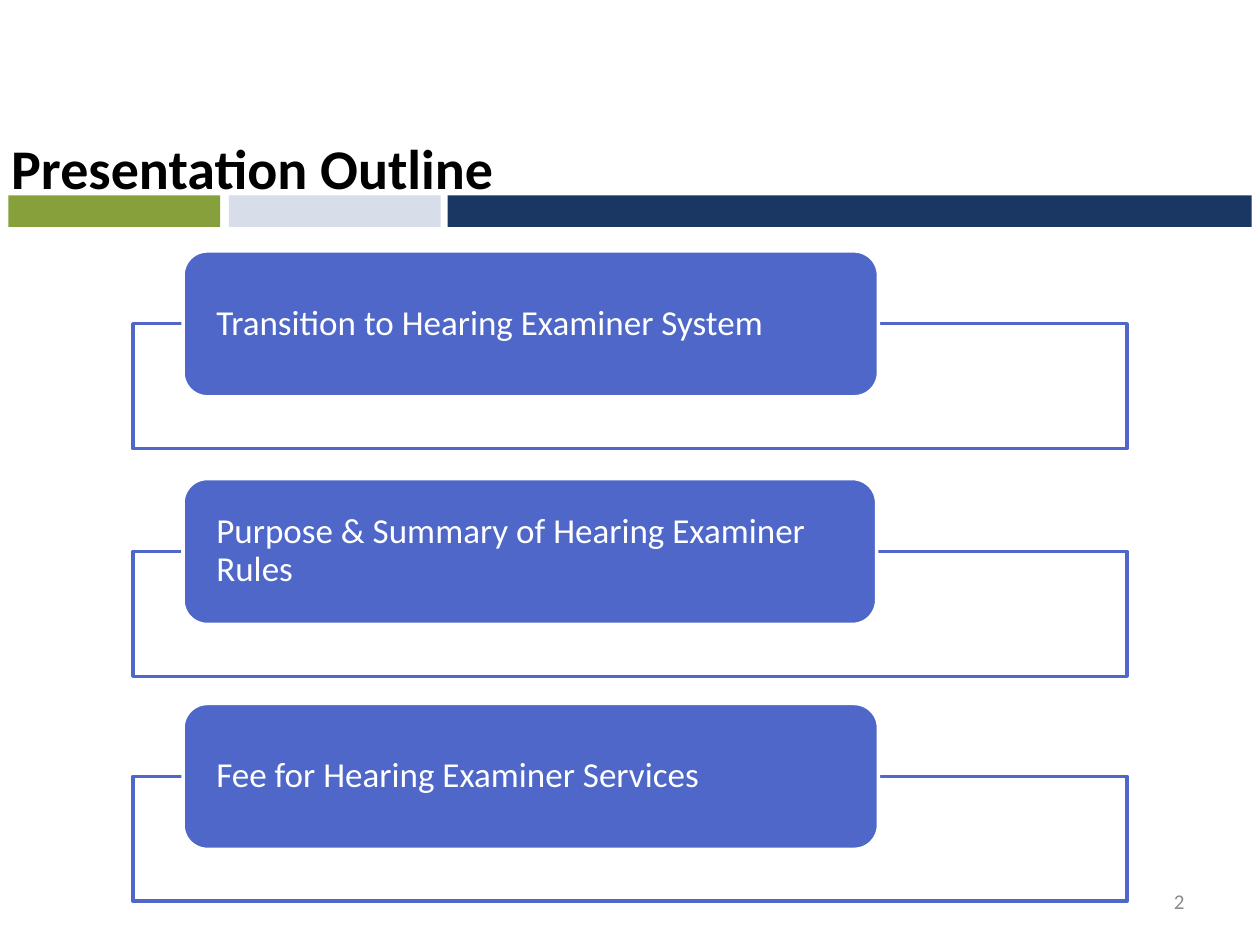
from lxml import etree
from pptx import Presentation
from pptx.dml.color import RGBColor
from pptx.enum import shapes, text
from pptx.oxml import ns
from pptx.util import Pt

BLUE, WHITE = "4E67C8", "FFFFFF"


def add_box(kind, x, y, w, h, fill, line=None):
    """Add a filled shape; without a line colour it has no outline."""
    sp = s.shapes.add_shape(kind, Pt(x), Pt(y), Pt(w), Pt(h))
    sp.shadow.inherit = False
    sp.fill.solid()
    sp.fill.fore_color.rgb = RGBColor.from_string(fill)
    if line:
        sp.line.color.rgb = RGBColor.from_string(line)
        sp.line.width = Pt(2)
    else:
        sp.line.fill.background()
    return sp


def write(sp, words, size, color, anchor, align=text.PP_ALIGN.LEFT):
    tf = sp.text_frame
    tf.word_wrap = True
    tf.vertical_anchor = anchor
    p = tf.paragraphs[0]
    p.text = words
    p.alignment = align
    p.font.name = "Calibri"
    p.font.size = Pt(size)
    p.font.color.rgb = RGBColor.from_string(color)
    return p


prs = Presentation()
prs.slide_width, prs.slide_height = Pt(720), Pt(540)
s = prs.slides.add_slide(prs.slide_layouts[6])
RECT = shapes.MSO_SHAPE.RECTANGLE
MIDDLE = text.MSO_ANCHOR.MIDDLE

# Coloured band under the title
for x, w, color in [(4.8, 121, "86A13C"), (130.8, 121, "D7DEEA"), (255.8, 459.5, "1A3662")]:
    add_box(RECT, x, 111.6, w, 18, color)

title = s.shapes.add_textbox(Pt(-0.7), Pt(4.3), Pt(684.7), Pt(113.8))
p = write(title, "Presentation Outline", 32, "000000", text.MSO_ANCHOR.BOTTOM)
p.font.bold = True

number = s.shapes.add_textbox(Pt(516), Pt(500.4), Pt(168), Pt(28.8))
write(number, "2", 12, "8C8C8C", MIDDLE, text.PP_ALIGN.RIGHT)

# Outline topics: a label overlapping the top edge of a frame
topics = [
    (143.4, 397.4, "Transition to Hearing Examiner System"),
    (273.5, 396.4, "Purpose & Summary of Hearing Examiner Rules"),
    (402, 397.4, "Fee for Hearing Examiner Services"),
]
for y, w, topic in topics:
    frame = add_box(RECT, 76, y + 41.6, 568, 71.4, WHITE, BLUE)
    white = frame.fill._xPr.find(ns.qn("a:solidFill"))[0]
    etree.SubElement(white, ns.qn("a:alpha"), val="90000")

    label = add_box(shapes.MSO_SHAPE.ROUNDED_RECTANGLE, 104.6, y, w, 83.4, BLUE, WHITE)
    p = write(label, topic, 20, WHITE, MIDDLE)
    p.line_spacing = 0.9
    tf = label.text_frame
    tf.margin_left = tf.margin_right = Pt(15)
    tf.margin_top = tf.margin_bottom = 0

prs.save("out.pptx")
